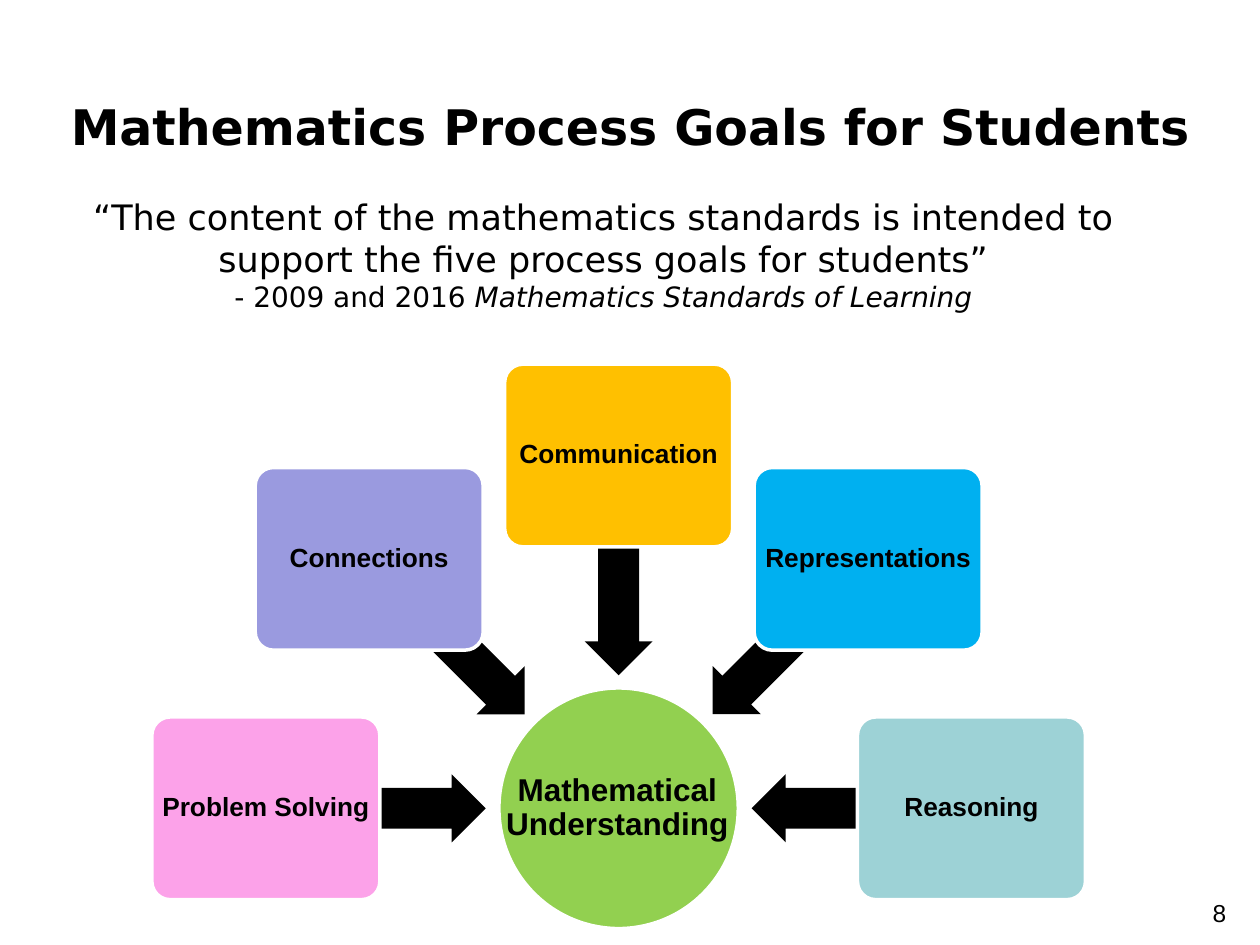
import math

from pptx import Presentation
from pptx.dml.color import RGBColor
from pptx.enum.shapes import MSO_SHAPE
from pptx.enum.text import MSO_ANCHOR, PP_ALIGN
from pptx.util import Inches, Pt

CENTER, RIGHT = PP_ALIGN.CENTER, PP_ALIGN.RIGHT
TOP, MIDDLE = MSO_ANCHOR.TOP, MSO_ANCHOR.MIDDLE
OVAL, ARROW, BOX = MSO_SHAPE.OVAL, MSO_SHAPE.LEFT_ARROW, MSO_SHAPE.ROUNDED_RECTANGLE

COLORS = {
    "black": "000000", "white": "FFFFFF", "hub": "92D050",
    "Problem Solving": "FCA2E9", "Connections": "9A9ADF",
    "Communication": "FFC000", "Representations": "00B0F0",
    "Reasoning": "9DD2D6",
}
GOALS = ["Problem Solving", "Connections", "Communication",
         "Representations", "Reasoning"]  # clockwise from the left

prs = Presentation()
prs.slide_width, prs.slide_height = Inches(10), Inches(7.5)
s = prs.slides.add_slide(prs.slide_layouts[6])
UNIT = prs.slide_width / 100  # the slide is a grid of 100 columns by 75 rows

HUB_X, HUB_Y = 49.1, 64.15
BOX_RADIUS, ARROW_RADIUS = 28, 19.3


def add_centered(kind, cx, cy, w, h, color):
    """Add a filled shape around a centre given in grid units."""
    sp = s.shapes.add_shape(kind, *(round(v * UNIT) for v in (cx - w / 2, cy - h / 2, w, h)))
    sp.shadow.inherit = False
    sp.fill.solid()
    sp.fill.fore_color.rgb = RGBColor.from_string(COLORS[color])
    if kind == ARROW:
        sp.line.fill.background()
    else:
        sp.line.color.rgb = RGBColor.from_string(COLORS["white"])
        sp.line.width = Pt(2)
    return sp


def write(sp, runs, align=CENTER, anchor=MIDDLE, font="Arial", inset=(0.1, 0.05), spacing=None):
    """Fill a shape with (text, size, bold, italic) runs; None is a line break."""
    tf = sp.text_frame
    tf.word_wrap = True
    tf.vertical_anchor = anchor
    tf.margin_left = tf.margin_right = Inches(inset[0])
    tf.margin_top = tf.margin_bottom = Inches(inset[1])
    p = tf.paragraphs[0]
    p.alignment = align
    p.line_spacing = spacing
    for run in runs:
        if run is None:
            p.add_line_break()
            continue
        r = p.add_run()
        r.text, size, r.font.bold, r.font.italic = run
        r.font.size = Pt(size)
        r.font.name = font
        r.font.color.rgb = RGBColor.from_string(COLORS["black"])


# Title
title = s.shapes.add_textbox(0, round(5 * UNIT), prs.slide_width, round(10 * UNIT))
write(title, [("Mathematics Process Goals for Students", 28, True, False)],
      font="DejaVu Sans")

# Hub
add_centered(OVAL, HUB_X, HUB_Y, 19, 19.1, "hub")
label = s.shapes.add_textbox(*(round(v * UNIT) for v in (39.7, 57.4, 18.6, 13.5)))
write(label, [("Mathematical Understanding", 18, True, False)],
      inset=(0.01, 0.01), spacing=0.9)

# Goals on a half circle, each with an arrow towards the hub
for i, goal in enumerate(GOALS):
    angle = 180 + 45 * i
    dx, dy = math.cos(math.radians(angle)), math.sin(math.radians(angle))
    arrow = add_centered(ARROW, HUB_X + ARROW_RADIUS * dx, HUB_Y + ARROW_RADIUS * dy,
                         17.5, 5.4, "black")
    arrow.adjustments[0], arrow.adjustments[1] = 0.6, 0.5
    arrow.rotation = (angle + 0) % 360
    box = add_centered(BOX, HUB_X + BOX_RADIUS * dx, HUB_Y + BOX_RADIUS * dy,
                       18.1, 14.5, goal)
    box.adjustments[0] = 0.1
    write(box, [(goal, 15, True, False)], inset=(0.03, 0.03), spacing=0.9)

# Quotation
quote = s.shapes.add_textbox(*(round(v * UNIT) for v in (2.8, 15, 90.2, 15)))
write(quote, [
    ("“The content of the mathematics standards is intended to support "
     "the five process goals for students”", 20, False, False),
    None,
    ("- 2009 and 2016 ", 16, False, False),
    ("Mathematics Standards of Learning", 16, False, True),
], anchor=TOP, font="DejaVu Sans")

# Slide number
number = s.shapes.add_textbox(*(round(v * UNIT) for v in (75, 70.8, 23.3, 5.2)))
write(number, [("8", 14, False, False)], align=RIGHT, anchor=TOP)

prs.save("out.pptx")
